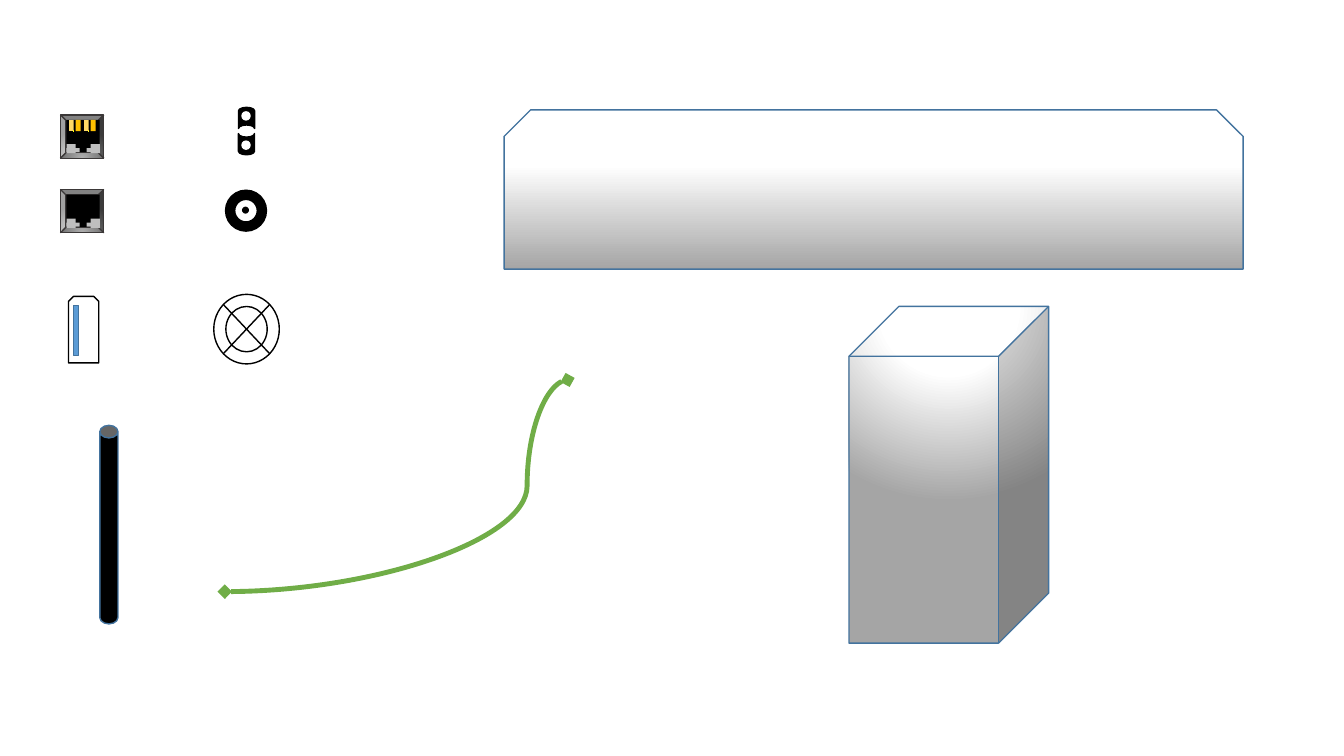
from dataclasses import dataclass
from typing import Any, Optional, Sequence

from pptx import Presentation
from pptx.dml.color import RGBColor as Rgb
from pptx.enum.dml import MSO_LINE as Dash
from pptx.enum.shapes import MSO_CONNECTOR as Link, MSO_SHAPE as Kind
from pptx.oxml import parse_xml as to_xml
from pptx.oxml.ns import nsdecls, qn
from pptx.util import Emu, Pt

HUE = {
    "white": "FFFFFF", "black": "000000", "edge": "43739E", "rim": "3B3838",
    "pale": "DBDBDB", "mid": "AAAAAA", "dark": "636363", "gray": "A5A5A5",
    "clip": "BFBFBF", "blue": "5B9BD5", "green": "70AD47",
    "gold": "FFC000", "yellow": "FFFF00", "sand": "FFD966",
}


@dataclass(frozen=True)
class Fade:
    stops: tuple[tuple[int, str], ...]
    form: str = ""
    rect: tuple[int, ...] = ()


@dataclass(frozen=True)
class Part:
    kind: Kind
    left: int
    top: int
    wide: int
    high: int
    fill: str | Fade = ""
    line: str = ""
    turn: int = 0
    bend: Optional[float] = None


STEEL = ((0, "white"), (35, "white"), (100, "gray"))
PANEL = Fade(STEEL)
TOWER = Fade(STEEL, "circle", (50, -80, 50, 180))
FRAME = Fade(((0, "pale"), (46, "mid"), (100, "dark")), "circle", (50, 130, 50, -30))
SHINE = Fade(((0, "yellow"), (22, "sand")), "rect", (100, 100, 0, 0))

JACK = [
    Part(Kind.BEVEL, 60, 0, 43, 43, FRAME, "rim"),
    Part(Kind.RECTANGLE, 66, 5, 33, 32, "black"),
    Part(Kind.RECTANGLE, 66, 33, 13, 4, "clip"),
    Part(Kind.RECTANGLE, 66, 29, 9, 9, "clip"),
    Part(Kind.RECTANGLE, 86, 33, 13, 4, "clip"),
    Part(Kind.RECTANGLE, 90, 29, 9, 9, "clip"),
]
PINS = [
    Part(Kind.RECTANGLE, left, 5, 5, 11, fill)
    for left, fill in zip((68, 75, 83, 90), (SHINE, "gold") * 2)
]
COAX = [
    Part(Kind.DONUT, 223, 188, 42, 42, "black"),
    Part(Kind.OVAL, 240, 205, 7, 7, "black"),
]
USB = [
    Part(Kind.SNIP_2_SAME_RECTANGLE, 68, 294, 30, 66, "white", "black"),
    Part(Kind.RECTANGLE, 73, 303, 5, 50, "blue", "edge"),
]
LAMP = [
    Part(Kind.FLOWCHART_SUMMING_JUNCTION, 212, 292, 65, 69, "", "black"),
    Part(Kind.OVAL, 224, 304, 41, 45, "", "black"),
]
PLUG = [
    Part(Kind.FLOWCHART_STORED_DATA, 234, 109, 21, 16, "black", "black", 90),
    Part(Kind.FLOWCHART_STORED_DATA, 234, 135, 21, 16, "black", "black", 270),
    Part(Kind.OVAL, 240, 111, 8, 8, "white", "white"),
    Part(Kind.OVAL, 240, 140, 8, 8, "white", "white"),
]
BAR = Part(Kind.SNIP_2_SAME_RECTANGLE, 500, 109, 733, 158, PANEL, "edge")
CABLE = Part(Kind.CAN, 99, 422, 18, 197, "black", "edge", bend=0.694)
BOX = Part(Kind.CUBE, 842, 304, 198, 334, TOWER, "edge")


def px(size: int) -> Emu:
    return Emu(size * 9144)


def color(name: str) -> Rgb:
    return Rgb.from_string(HUE[name])


def blend(shape: Any, fade: Fade) -> None:
    stops = "".join(
        f'<a:gs pos="{at * 1000}"><a:srgbClr val="{HUE[name]}"/></a:gs>'
        for at, name in fade.stops
    )
    if fade.form:
        sides = " ".join(f'{s}="{v * 1000}"' for s, v in zip("ltrb", fade.rect))
        way = f'<a:path path="{fade.form}"><a:fillToRect {sides}/></a:path>'
    else:
        way = '<a:lin ang="5400000" scaled="0"/>'
    grad = to_xml(
        f'<a:gradFill {nsdecls("a")} rotWithShape="1">'
        f"<a:gsLst>{stops}</a:gsLst>{way}</a:gradFill>"
    )
    props = shape._element.spPr
    props.replace(props.find(qn("a:noFill")), grad)


def draw(shapes: Any, part: Part, down: int = 0) -> None:
    shape = shapes.add_shape(
        part.kind, px(part.left), px(part.top + down), px(part.wide), px(part.high)
    )
    shape.shadow.inherit = False
    shape.rotation = part.turn
    if part.bend is not None:
        shape.adjustments[0] = part.bend
    shape.fill.background()
    if isinstance(part.fill, Fade):
        blend(shape, part.fill)
    elif part.fill:
        shape.fill.solid()
        shape.fill.fore_color.rgb = color(part.fill)
    if part.line:
        shape.line.color.rgb = color(part.line)
        shape.line.width = Pt(1)
    else:
        shape.line.fill.background()


def group(shapes: Any, parts: Sequence[Part], down: int = 0) -> None:
    unit = shapes.add_group_shape()
    for part in parts:
        draw(unit.shapes, part, down)


def wire(shapes: Any) -> None:
    cord = shapes.add_connector(Link.CURVE, px(223), px(587), px(563), px(377))
    cord.line.color.rgb = color("green")
    cord.line.width = Pt(3.5)
    cord.line.dash_style = Dash.SOLID
    props = cord._element.spPr
    guides = props.find(qn("a:prstGeom")).get_or_add_avLst()
    guides.append(to_xml(f'<a:gd {nsdecls("a")} name="adj1" fmla="val 88200"/>'))
    rule = props.find(qn("a:ln"))
    for end in ("headEnd", "tailEnd"):
        rule.append(to_xml(f'<a:{end} {nsdecls("a")} type="diamond"/>'))
    props.append(to_xml(f'<a:effectLst {nsdecls("a")}/>'))


def main() -> None:
    deck = Presentation()
    deck.slide_width, deck.slide_height = px(1333), px(750)
    shapes = deck.slides.add_slide(deck.slide_layouts[6]).shapes
    draw(shapes, BAR)
    group(shapes, JACK, 188)
    group(shapes, COAX)
    group(shapes, USB)
    draw(shapes, CABLE)
    draw(shapes, BOX)
    group(shapes, LAMP)
    wire(shapes)
    group(shapes, JACK + PINS, 114)
    group(shapes, PLUG)
    deck.save("out.pptx")


if __name__ == "__main__":
    main()
